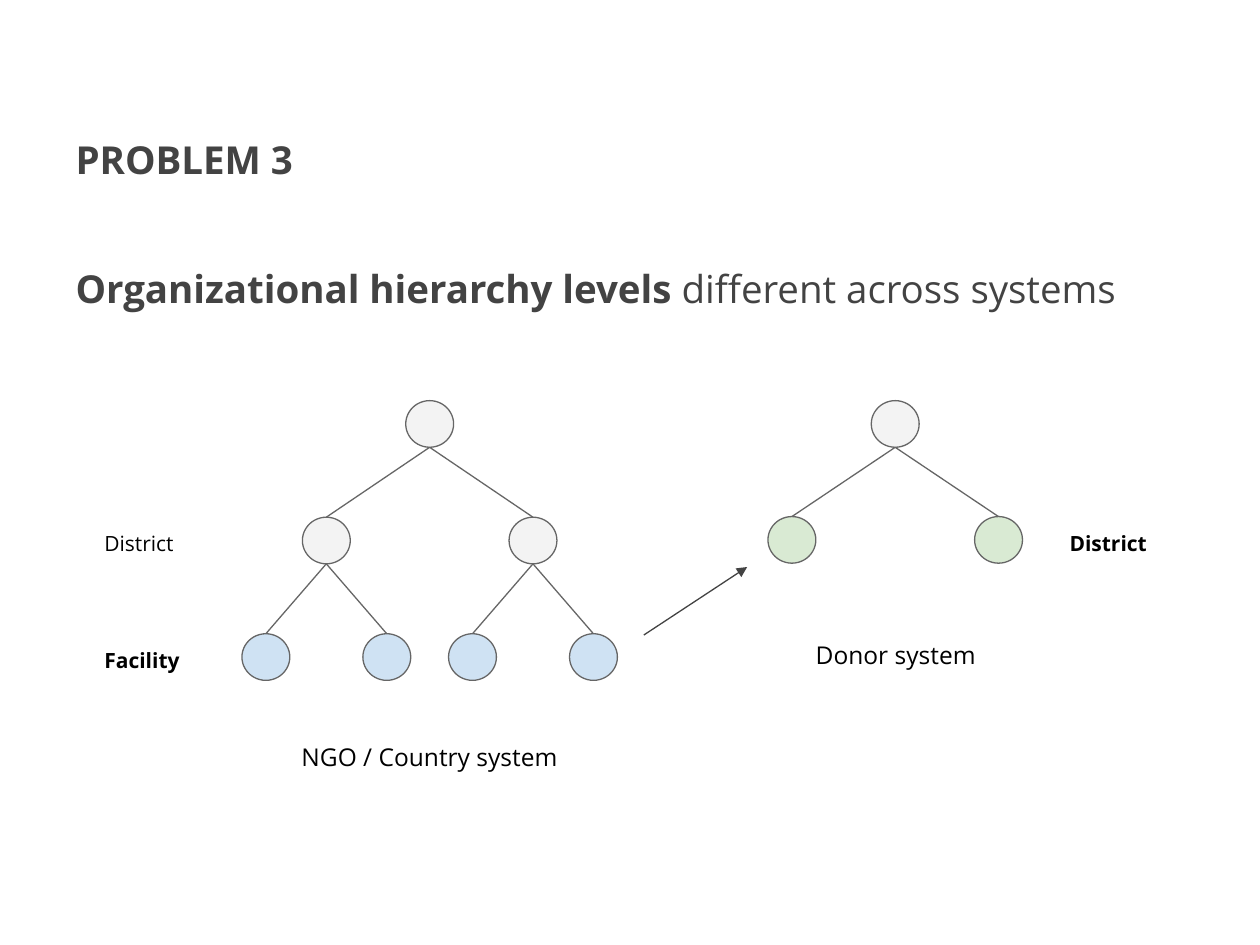
from pptx import Presentation
from pptx.dml.color import RGBColor
from pptx.enum import shapes, text
from pptx.oxml.ns import qn
from pptx.util import Pt
from lxml import etree

PX = 9144  # 100 px to the inch
FONT = "Open Sans"
COLORS = {
    "heading": "434343",
    "label": "000000",
    "outline": "666666",
    "upper": "F3F3F3",
    "facility": "CFE2F3",
    "district": "D9EAD3",
}
NODE_W, NODE_H = 38, 37
SPREADS = (82, 48)  # sideways step from a node to its children, by level


def emu(*lengths):
    return [round(length * PX) for length in lengths]


def color(name):
    return RGBColor.from_string(COLORS[name])


def write(shape, spans, size, ink, align="LEFT", anchor="TOP"):
    """Fill a text frame with one paragraph of (words, bold) spans."""
    frame = shape.text_frame
    frame_format = {
        "word_wrap": True,
        "auto_size": text.MSO_AUTO_SIZE.NONE,
        "vertical_anchor": getattr(text.MSO_ANCHOR, anchor),
    }
    for side in ("left", "top", "right", "bottom"):
        frame_format[f"margin_{side}"] = 10 * PX
    for name, value in frame_format.items():
        setattr(frame, name, value)

    para = frame.paragraphs[0]
    para.alignment = getattr(text.PP_ALIGN, align)
    para.space_before = Pt(0)
    for words, bold in spans:
        span = para.add_run()
        span.text = words
        for name, value in {"name": FONT, "size": Pt(size), "bold": bold}.items():
            setattr(span.font, name, value)
        span.font.color.rgb = color(ink)
    return para


def place(shape, box):
    for name, value in zip(("left", "top", "width", "height"), emu(*box)):
        setattr(shape, name, value)


def add_headings(page, title_box, body_box):
    title, body = page.shapes.title, page.placeholders[1]
    place(title, title_box)
    place(body, body_box)
    write(title, [("PROBLEM 3", True)], 22, "heading", anchor="BOTTOM")
    para = write(body, [("Organizational hierarchy levels", True),
                        (" different across systems", False)], 22, "heading")
    # Plain paragraph without the template's bullet
    properties = para._p.get_or_add_pPr()
    properties.set("marL", "0")
    properties.set("indent", "0")
    etree.SubElement(properties, qn("a:buNone"))


def add_label(page, box, words, size=12, bold=False, align="LEFT"):
    label = page.shapes.add_textbox(*emu(*box))
    write(label, [(words, bold)], size, "label", align)


def add_line(page, start, end, ink="outline", arrow=False):
    line = page.shapes.add_connector(
        shapes.MSO_CONNECTOR.STRAIGHT, *emu(*start, *end))
    line.line.color.rgb = color(ink)
    line.line.width = Pt(0.75)
    if arrow:
        etree.SubElement(line.line._get_or_add_ln(), qn("a:tailEnd"), type="triangle")
    etree.SubElement(line._element.spPr, qn("a:effectLst"))


def add_node(page, center, top, fill):
    node = page.shapes.add_shape(
        shapes.MSO_SHAPE.OVAL, *emu(center - NODE_W / 2, top, NODE_W, NODE_H))
    node.shadow.inherit = False
    node.fill.solid()
    node.fill.fore_color.rgb = color(fill)
    node.line.color.rgb = color("outline")
    node.line.width = Pt(0.75)


def add_tree(page, box, fills):
    """Draw a binary tree with one fill per level, centred in the box."""
    left, top, width, height = box
    pitch = (height - NODE_H) / (len(fills) - 1)
    centers = [left + width / 2]
    for level, fill in enumerate(fills):
        level_top = top + level * pitch
        children = []
        for center in centers:
            add_node(page, center, level_top, fill)
            if level < len(fills) - 1:
                for step in (-SPREADS[level], SPREADS[level]):
                    add_line(page, (center, level_top + NODE_H),
                             (center + step, level_top + pitch))
                    children.append(center + step)
        centers = children


def main():
    deck = Presentation()
    deck.slide_width, deck.slide_height = emu(1000, 750)
    page = deck.slides.add_slide(deck.slide_layouts[1])

    add_headings(page, (50, 30, 900, 125), (50, 200, 900, 85))

    # The two hierarchies and the step between them
    add_tree(page, (192, 318, 298, 222), ("upper", "upper", "facility"))
    add_tree(page, (610, 318, 201, 129), ("upper", "district"))
    add_line(page, (511, 504), (593, 450), "heading", arrow=True)

    # System names
    add_label(page, (223, 579, 236, 45), "NGO / Country system", 14, align="CENTER")
    add_label(page, (593, 498, 236, 45), "Donor system", 14, align="CENTER")

    # Level names
    add_label(page, (73, 411, 121, 34), "District")
    add_label(page, (73, 504, 108, 34), "Facility", bold=True)
    add_label(page, (839, 411, 121, 34), "District", bold=True)

    deck.save("out.pptx")


if __name__ == "__main__":
    main()
